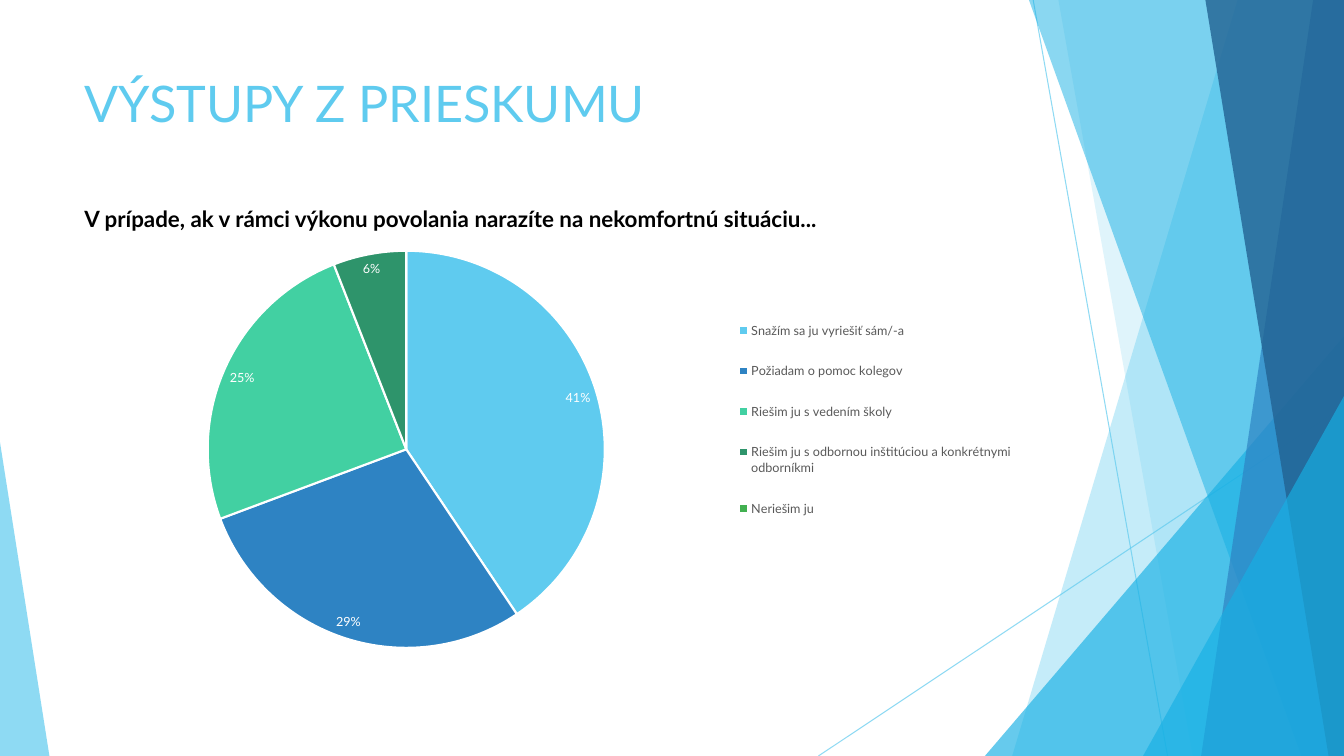
from lxml import etree
from pptx import Presentation
from pptx.chart.data import CategoryChartData
from pptx.dml.color import RGBColor
from pptx.enum.chart import XL_CHART_TYPE, XL_LABEL_POSITION, XL_LEGEND_POSITION
from pptx.enum.shapes import MSO_CONNECTOR, MSO_SHAPE
from pptx.enum.text import MSO_ANCHOR, PP_ALIGN
from pptx.oxml.ns import qn
from pptx.util import Pt

PIE = XL_CHART_TYPE.PIE
BEST_FIT = XL_LABEL_POSITION.BEST_FIT
LEGEND_RIGHT = XL_LEGEND_POSITION.RIGHT
STRAIGHT = MSO_CONNECTOR.STRAIGHT
TRIANGLE = MSO_SHAPE.ISOSCELES_TRIANGLE
TOP = MSO_ANCHOR.TOP
LEFT = PP_ALIGN.LEFT

WIDTH, HEIGHT = 960, 540
FONT = "Lato"
SKY, AZURE, BLUE, NAVY = "5FCBEF", "17B0E4", "2E83C3", "226292"
ANSWERS = [
    ("Snažím sa ju vyriešiť sám/-a", 41, SKY),
    ("Požiadam o pomoc kolegov", 29, BLUE),
    ("Riešim ju s vedením školy", 25, "42D0A2"),
    ("Riešim ju s odbornou inštitúciou a konkrétnymi odborníkmi", 6, "2E946B"),
    ("Neriešim ju", 0, "42B051"),
]


def rgb(value):
    """Return the colour for a hex string."""
    return RGBColor.from_string(value)


def set_font(font, size, color, bold=False):
    """Apply the deck font with a size, colour and weight."""
    font.name, font.size, font.bold = FONT, Pt(size), bold
    font.color.rgb = rgb(color)


def write(shape, text, box, size, color, bold=False):
    """Place a text shape in its box and fill it with one formatted run."""
    shape.left, shape.top, shape.width, shape.height = map(Pt, box)
    frame = shape.text_frame
    frame.word_wrap = True
    frame.vertical_anchor = TOP
    paragraph = frame.paragraphs[0]
    paragraph.alignment = LEFT
    run = paragraph.add_run()
    run.text = text
    set_font(run.font, size, color, bold)


def set_opacity(fill_owner, percent):
    """Make the solid colour inside an element partly transparent."""
    color = next(fill_owner.iter(qn("a:srgbClr")))
    etree.SubElement(color, qn("a:alpha"), val=str(percent * 1000))


def paint(shape, color, opacity):
    """Give a facet a transparent fill without outline or shadow."""
    shape.shadow.inherit = False
    shape.fill.solid()
    shape.fill.fore_color.rgb = rgb(color)
    shape.line.fill.background()
    set_opacity(shape._element.spPr, opacity)


def add_ray(slide, start, end):
    """Draw a thin translucent line."""
    ray = slide.shapes.add_connector(STRAIGHT, *map(Pt, start + end))
    ray.line.color.rgb = rgb(SKY)
    ray.line.width = Pt(0.75)
    properties = ray._element.spPr
    set_opacity(properties, 70)
    etree.SubElement(properties, qn("a:effectLst"))


def add_band(slide, right, bottom, top_x, bottom_x, color, opacity):
    """Draw a band with a slanted left side, reaching the right edge."""
    builder = slide.shapes.build_freeform(Pt(top_x), 0)
    corners = [(right, 0), (right, bottom), (bottom_x, bottom)]
    builder.add_line_segments([(Pt(x), Pt(y)) for x, y in corners], close=True)
    paint(builder.convert_to_shape(), color, opacity)


def add_corner(slide, box, apex, color, opacity):
    """Draw a right triangle with its apex at the given share of its width."""
    corner = slide.shapes.add_shape(TRIANGLE, *map(Pt, box))
    corner.adjustments[0] = apex
    paint(corner, color, opacity)


def add_facets(slide, right, bottom):
    """Draw the layered facets along the slide edges."""
    add_ray(slide, (738, 0), (834, bottom))
    add_ray(slide, (right, 290), (584.6, bottom))
    add_band(slide, right, bottom, 884, 723, SKY, 36)
    add_band(slide, right, bottom, 756, 852, SKY, 20)
    add_corner(slide, (right - 256.5, bottom - 300, 256.5, 300), 1, AZURE, 66)
    add_band(slide, right, bottom, 735, 929.5, AZURE, 50)
    add_band(slide, right, bottom, 938, 858, BLUE, 70)
    add_band(slide, right, bottom, 861, 949, NAVY, 80)
    add_corner(slide, (right - 143.5, bottom - 257, 143.5, 257), 1, AZURE, 66)
    add_corner(slide, (0, bottom - 224, 35.3, 224), 0, SKY, 70)


def make_layout(inner=False, **shares):
    """Build a manual chart layout from shares of the chart area."""
    layout = etree.Element(qn("c:layout"))
    manual = etree.SubElement(layout, qn("c:manualLayout"))
    if inner:
        etree.SubElement(manual, qn("c:layoutTarget"), val="inner")
    for axis in "xy":
        etree.SubElement(manual, qn(f"c:{axis}Mode"), val="edge")
    for name, share in shares.items():
        etree.SubElement(manual, qn(f"c:{name}"), val=str(share))
    return layout


def arrange(chart):
    """Fix the places of the pie and the legend in the chart."""
    plot_area = next(chart._chartSpace.iter(qn("c:plotArea")))
    legend = next(chart._chartSpace.iter(qn("c:legend")))
    for part in (plot_area, legend):
        for layout in part.findall(qn("c:layout")):
            part.remove(layout)
    plot_area.insert(0, make_layout(True, x=0.14, y=0.03, w=0.42, h=0.93))
    legend.find(qn("c:legendPos")).addnext(make_layout(x=0.69, y=0.14, w=0.31, h=0.57))


def hide_label(labels, index):
    """Remove the label of one slice."""
    label = etree.Element(qn("c:dLbl"))
    etree.SubElement(label, qn("c:idx"), val=str(index))
    etree.SubElement(label, qn("c:delete"), val="1")
    labels._element.insert(0, label)


def add_answer_pie(slide, box):
    """Draw the pie of survey answers with its legend."""
    data = CategoryChartData()
    data.categories = [answer for answer, _, _ in ANSWERS]
    data.add_series("Series 1", [share for _, share, _ in ANSWERS])
    chart = slide.shapes.add_chart(PIE, *map(Pt, box), data).chart
    chart.has_title = False
    set_font(chart.font, 10, "000000")
    chart.has_legend = True
    chart.legend.position = LEGEND_RIGHT
    chart.legend.include_in_layout = False
    set_font(chart.legend.font, 9, "595959")
    arrange(chart)

    plot = chart.plots[0]
    plot.vary_by_categories = True
    answers = plot.series[0]
    labels = answers.data_labels
    labels.show_value = False
    labels.show_percentage = True
    labels.number_format = "0%"
    labels.number_format_is_linked = False
    labels.position = BEST_FIT
    set_font(labels.font, 9, "FFFFFF")
    for index, (_, share, color) in enumerate(ANSWERS):
        piece = answers.points[index].format
        piece.fill.solid()
        piece.fill.fore_color.rgb = rgb(color)
        piece.line.color.rgb = rgb("FFFFFF")
        piece.line.width = Pt(1.5)
        if not share:
            hide_label(labels, index)


def add_survey(slide, left, top, width):
    """Place the heading, the question and the answer pie."""
    write(slide.shapes.title, "VÝSTUPY Z PRIESKUMU", (left, top, width, 104), 36, SKY)
    add_answer_pie(slide, (left, top + 122, width, 305))
    question_box = (left, top + 95, width, 26.6)
    question = slide.shapes.add_textbox(*map(Pt, question_box))
    write(question, "V prípade, ak v rámci výkonu povolania narazíte na nekomfortnú situáciu...",
          question_box, 16, "000000", bold=True)


def main():
    """Build and save the survey slide."""
    deck = Presentation()
    deck.slide_width, deck.slide_height = Pt(WIDTH), Pt(HEIGHT)
    slide = deck.slides.add_slide(deck.slide_layouts[5])
    add_facets(slide, WIDTH, HEIGHT)
    add_survey(slide, 53.3, 48, 676.8)
    deck.save("out.pptx")


if __name__ == "__main__":
    main()
